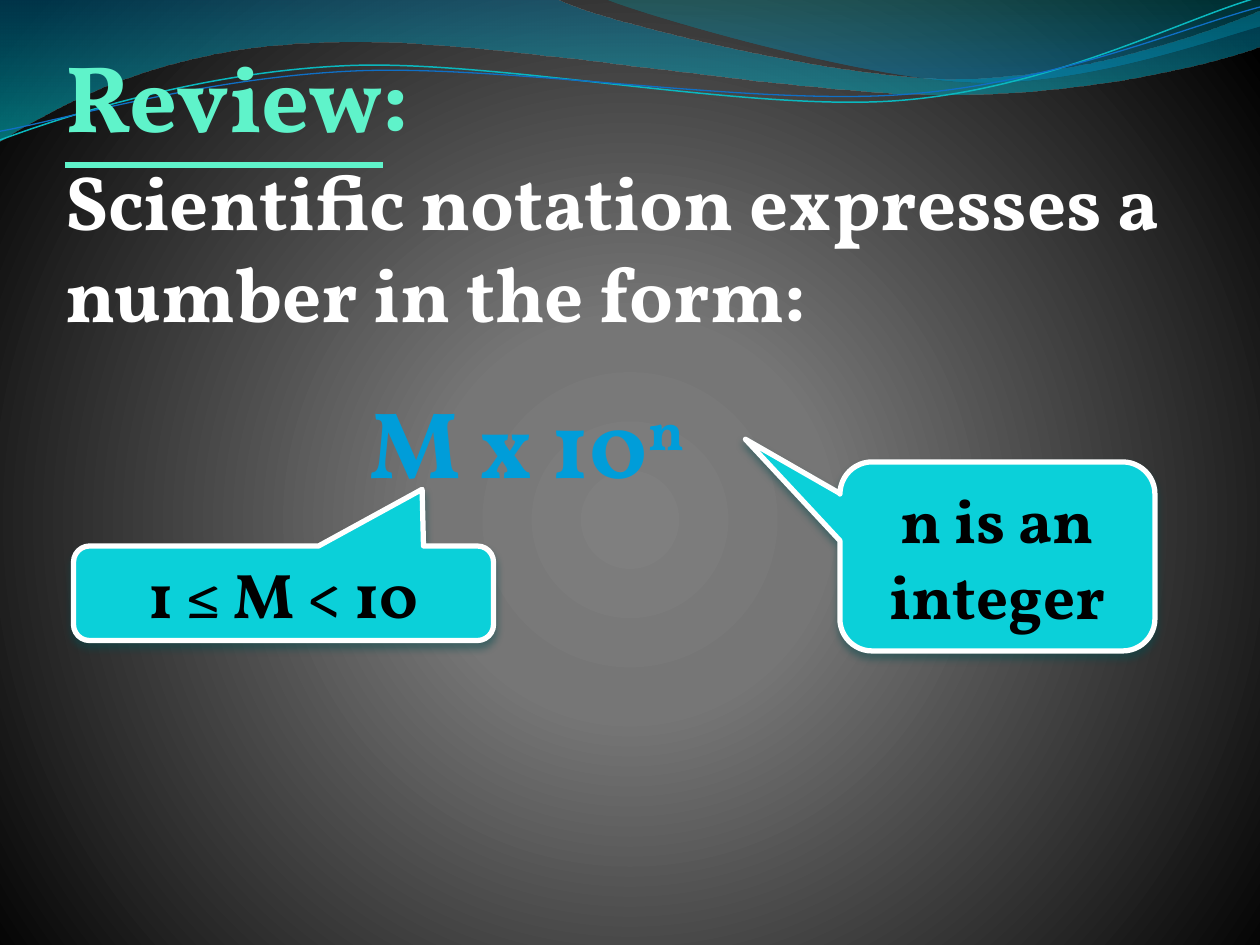
from dataclasses import dataclass

from lxml import etree
from pptx import Presentation
from pptx import util as u
from pptx.dml.color import RGBColor
from pptx.enum import shapes, text
from pptx.oxml import ns


@dataclass(frozen=True)
class Theme:
    font: str = "Vollkorn"
    heading: int = 54
    body: int = 44
    label: int = 36
    mint: str = "5FF3CA"
    white: str = "FFFFFF"
    blue: str = "009DD9"
    black: str = "000000"
    callout: str = "0BD0D9"
    shadow: str = "024B4E"


THEME = Theme()
SIZE = (720, 540)
BACKDROP = [(0, "7F7F7F", 100), (25, "767676", 100), (100, "000000", 100)]

TITLE = [("Review", {"underline": True}), (":", {})]
BODY = [("Scientific notation expresses a number in the form:", {})]
FORMULA = [("M x 10", {}), ("n", {"superscript": True})]
TITLE_BOX = (30, 18, 294, 72)
BODY_BOX = (30, 84, 690, 113)
FORMULA_BOX = (204, 216, 258, 72)

CALLOUTS = [
    ("1 ≤ M < 10", (42, 312, 240, 54), (0.33, -1.1, 0.17)),
    ("n is an integer", (480, 264, 180, 108), (-0.8, -0.62, 0.17)),
]

RIBBONS = [
    ((0, 0), [
        [(317, -1)],
        [(343, 12), (478, 45), (546, 45)],
        [(614, 45), (690, 19), (720, 6)],
        [(721, 26)],
        [(708, 32), (626, 55), (537, 54)],
        [(446, 54), (275, 20), (185, 24)],
        [(93, 26), (33, 60), (-1, 81)],
    ], [(0, "0074A1", 45), (100, "00C6CF", 55)]),
    ((345, -1), [
        [(366, 8), (491, 45), (554, 47)],
        [(616, 50), (692, 23), (720, 15)],
        [(720, 0)],
    ], [(0, "00A1A9", 30), (80, "008BBF", 45)]),
]
STRANDS = [
    ((0, 80), [
        [(35, 67), (114, 41), (199, 37.5)],
        [(284, 34), (427, 64), (513, 57.5)],
        [(600, 51), (675, 11), (719, -1.5)],
    ], "0AB8BF", 0.85),
    ((0, 75), [
        [(34, 69), (118, 44), (204, 40.5)],
        [(290, 37), (430, 60.5), (516, 54)],
        [(602, 48), (678, 15), (720, 4)],
    ], "0F6FC6", 0.75),
]


def color(value):
    return RGBColor.from_string(value)


def add_node(parent, tag, **attributes):
    values = {name: str(value) for name, value in attributes.items()}
    return etree.SubElement(parent, ns.qn(tag), values)


def add_color(parent, value, opacity):
    node = add_node(parent, "a:srgbClr", val=value)
    if opacity < 100:
        add_node(node, "a:alpha", val=opacity * 1000)


def set_gradient(fill, properties, stops, radial=False):
    fill.solid()
    solid = properties.find(ns.qn("a:solidFill"))
    gradient = etree.Element(ns.qn("a:gradFill"), rotWithShape="1")
    stop_list = add_node(gradient, "a:gsLst")
    for position, value, opacity in stops:
        add_color(add_node(stop_list, "a:gs", pos=position * 1000), value, opacity)
    if radial:
        path = add_node(gradient, "a:path", path="circle")
        add_node(path, "a:fillToRect", l=10000, t=110000, r=10000, b=100000)
    else:
        add_node(gradient, "a:lin", ang=90 * 60000, scaled=1)
    properties.replace(solid, gradient)


def add_outline(slide, start, steps, closed):
    builder = slide.shapes.build_freeform(*map(u.Pt, start))
    points = [(u.Pt(x), u.Pt(y)) for step in steps for x, y in step]
    builder.add_line_segments(points, close=closed)
    shape = builder.convert_to_shape()
    shape.shadow.inherit = False
    segments = iter(list(shape._element.iter(ns.qn("a:lnTo"))))
    for step in steps:
        edge = [next(segments) for _ in step]
        if len(edge) == 3:
            curve = etree.Element(ns.qn("a:cubicBezTo"))
            edge[0].addprevious(curve)
            for segment in edge:
                curve.append(segment[0])
                segment.getparent().remove(segment)
    return shape


def add_waves(slide):
    waves = []
    for start, steps, stops in RIBBONS:
        ribbon = add_outline(slide, start, steps, True)
        set_gradient(ribbon.fill, ribbon._element.spPr, stops)
        ribbon.line.fill.background()
        waves.append(ribbon)
    for start, steps, value, width in STRANDS:
        strand = add_outline(slide, start, steps, False)
        strand.fill.background()
        strand.line.color.rgb = color(value)
        strand.line.width = u.Pt(width)
        waves.append(strand)
    for index, wave in enumerate(waves):
        slide.shapes._spTree.insert(2 + index, wave._element)


def write(shape, parts, size, value, align=text.PP_ALIGN.LEFT,
          anchor=text.MSO_ANCHOR.TOP, fit=text.MSO_AUTO_SIZE.SHAPE_TO_FIT_TEXT):
    frame = shape.text_frame
    frame.word_wrap = True
    frame.auto_size = fit
    frame.vertical_anchor = anchor
    paragraph = frame.paragraphs[0]
    paragraph.alignment = align
    paragraph.space_before = u.Pt(0)
    for words, style in parts:
        run = paragraph.add_run()
        run.text = words
        run.font.name = THEME.font
        run.font.size = u.Pt(size)
        run.font.bold = True
        run.font.color.rgb = color(value)
        if style.get("underline"):
            run.font.underline = True
        if style.get("superscript"):
            run._r.get_or_add_rPr().set("baseline", "30000")
    return paragraph


def place(shape, box):
    shape.left, shape.top, shape.width, shape.height = map(u.Pt, box)


def add_callout(slide, words, box, adjustments):
    callout = slide.shapes.add_shape(
        shapes.MSO_SHAPE.ROUNDED_RECTANGULAR_CALLOUT, *map(u.Pt, box))
    for index, value in enumerate(adjustments):
        callout.adjustments[index] = value
    callout.fill.solid()
    callout.fill.fore_color.rgb = color(THEME.callout)
    callout.line.color.rgb = color(THEME.white)
    callout.line.width = u.Pt(3)
    callout.shadow.inherit = False
    effects = callout._element.spPr.find(ns.qn("a:effectLst"))
    shadow = add_node(effects, "a:outerShdw", blurRad=u.Pt(4.5), dist=u.Pt(3),
                      dir=90 * 60000, rotWithShape=0)
    add_color(shadow, THEME.shadow, 48)
    write(callout, [(words, {})], THEME.label, THEME.black, text.PP_ALIGN.CENTER,
          text.MSO_ANCHOR.MIDDLE, None)


def main():
    presentation = Presentation()
    presentation.slide_width, presentation.slide_height = map(u.Pt, SIZE)
    slide = presentation.slides.add_slide(presentation.slide_layouts[1])
    background = slide.background.fill
    set_gradient(background, slide._element.cSld.bg.bgPr, BACKDROP, radial=True)
    add_waves(slide)

    title, body = slide.shapes.title, slide.placeholders[1]
    place(title, TITLE_BOX)
    write(title, TITLE, THEME.heading, THEME.mint)
    place(body, BODY_BOX)
    properties = write(body, BODY, THEME.body, THEME.white)._p.get_or_add_pPr()
    properties.set("marL", "0")
    properties.set("indent", "0")
    add_node(properties, "a:buNone")
    formula = slide.shapes.add_textbox(*map(u.Pt, FORMULA_BOX))
    write(formula, FORMULA, THEME.heading, THEME.blue)
    for words, box, adjustments in CALLOUTS:
        add_callout(slide, words, box, adjustments)
    presentation.save("out.pptx")


if __name__ == "__main__":
    main()
